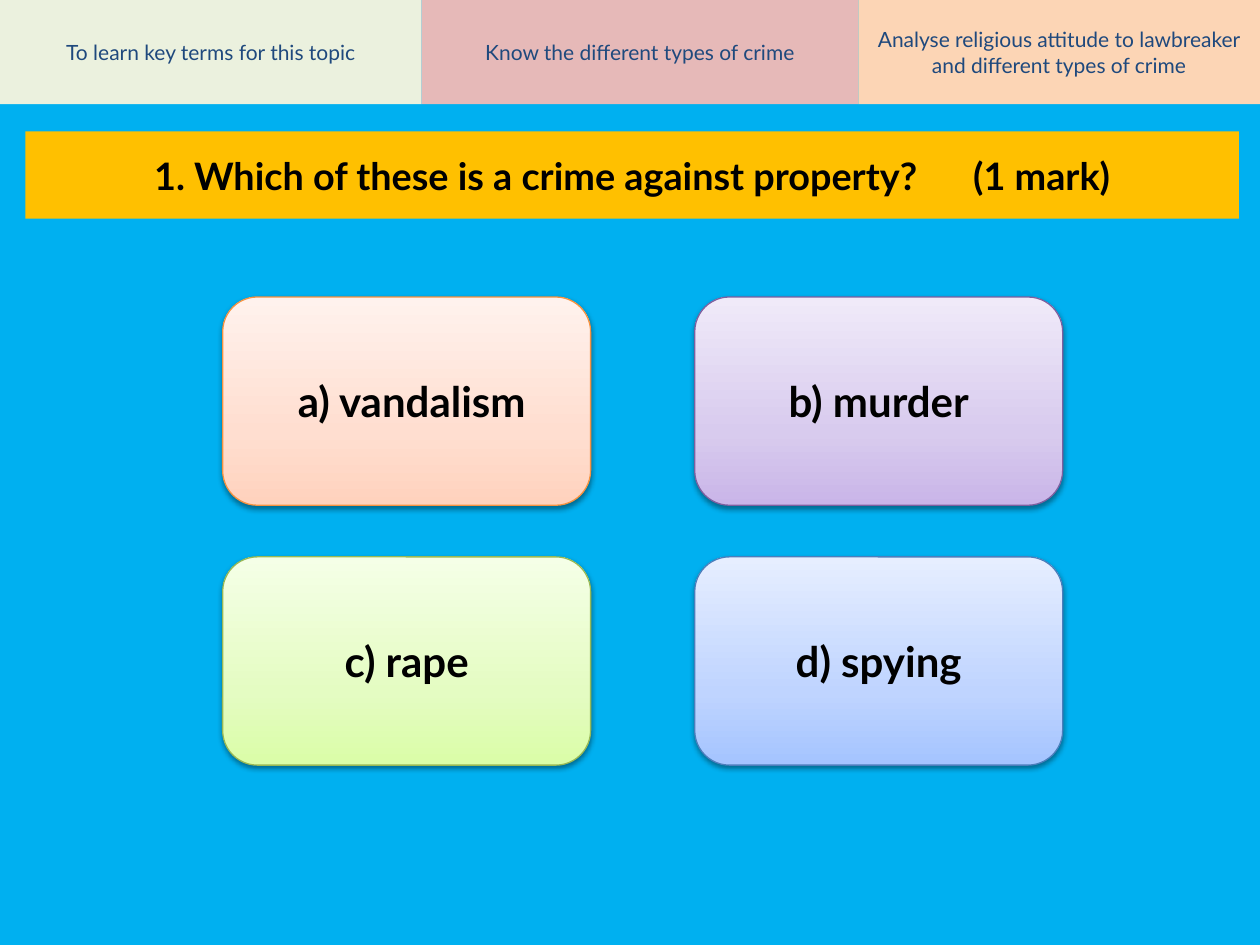
from dataclasses import dataclass

from lxml.etree import SubElement
from pptx import Presentation
from pptx.dml.color import RGBColor
from pptx.enum.shapes import MSO_SHAPE
from pptx.enum.text import MSO_ANCHOR, MSO_AUTO_SIZE, PP_ALIGN
from pptx.oxml import parse_xml
from pptx.oxml.ns import nsdecls, qn
from pptx.util import Pt


@dataclass(frozen=True)
class Theme:
    font: str = "Lato"
    background: str = "00B0F0"
    banner: str = "FFC000"
    ink: str = "000000"
    goal_ink: str = "1F497D"
    goal_size: float = 12
    title_size: float = 21.6
    answer_size: float = 24
    orange: tuple = ("F69240", "FFD2BD", "FFDED0", "FFF2ED")
    purple: tuple = ("7D60A0", "C9B5E8", "D8CBEE", "F0EAF9")
    green: tuple = ("98B955", "DAFDA7", "E4FCC2", "F5FFE7")
    blue: tuple = ("4B7EBC", "A4C4FF", "BFD4FF", "E6EEFF")


THEME = Theme()

GOALS = [
    ("To learn key terms for this topic", 241, "EBF1DE"),
    ("Know the different types of crime", 249.5, "E6B9B8"),
    ("Analyse religious attitude to lawbreaker and different types of crime", 229.5, "FCD5B5"),
]
QUESTION = "1. Which of these is a crime against property?\t(1 mark)"
ANSWERS = [
    (" a) vandalism", THEME.orange),
    ("b) murder", THEME.purple),
    ("c) rape", THEME.green),
    ("d) spying", THEME.blue),
]


def rgb(value):
    return RGBColor.from_string(value)


def write(sp, text, size, color, bold=False):
    tf = sp.text_frame
    tf.text = text
    tf.word_wrap = True
    tf.auto_size = MSO_AUTO_SIZE.NONE
    tf.vertical_anchor = MSO_ANCHOR.MIDDLE
    p = tf.paragraphs[0]
    p.alignment = PP_ALIGN.CENTER
    for r in p.runs:
        r.font.name = THEME.font
        r.font.size = Pt(size)
        r.font.bold = bold
        r.font.color.rgb = rgb(color)


def fill_solid(sp, color):
    sp.fill.solid()
    sp.fill.fore_color.rgb = rgb(color)


def add_box(s, kind, left, top, width, height):
    sp = s.shapes.add_shape(kind, Pt(left), Pt(top), Pt(width), Pt(height))
    sp.shadow.inherit = False
    return sp


def fill_gradient(sp, colors):
    stops = "".join(
        f'<a:gs pos="{pos}"><a:srgbClr val="{color}"/></a:gs>'
        for pos, color in zip((0, 35000, 100000), colors)
    )
    grad = parse_xml(
        f'<a:gradFill {nsdecls("a")} rotWithShape="1"><a:gsLst>{stops}</a:gsLst>'
        '<a:lin ang="16200000" scaled="1"/></a:gradFill>'
    )
    sp.element.spPr.find(qn("a:ln")).addprevious(grad)


def add_soft_shadow(sp):
    effects = sp.element.spPr.find(qn("a:effectLst"))
    shadow = SubElement(
        effects, qn("a:outerShdw"), blurRad=str(Pt(3.1)), dist=str(Pt(1.6)),
        dir="5400000", rotWithShape="0",
    )
    color = SubElement(shadow, qn("a:srgbClr"), val="000000")
    SubElement(color, qn("a:alpha"), val="38000")


def add_goals(s, left, top, height):
    for text, width, color in GOALS:
        sp = add_box(s, MSO_SHAPE.RECTANGLE, left, top, width, height)
        fill_solid(sp, color)
        sp.line.fill.background()
        write(sp, text, THEME.goal_size, THEME.goal_ink)
        left += width


def add_question(s, left, top, width, height):
    sp = s.shapes.title
    sp.left, sp.top, sp.width, sp.height = Pt(left), Pt(top), Pt(width), Pt(height)
    fill_solid(sp, THEME.banner)
    write(sp, QUESTION, THEME.title_size, THEME.ink, bold=True)


def add_answers(s, left, top, width, height):
    gap_x, gap_y = 59.5, 29.5
    card_w, card_h = (width - gap_x) / 2, (height - gap_y) / 2
    for i, (text, (edge, *stops)) in enumerate(ANSWERS):
        row, col = divmod(i, 2)
        sp = add_box(
            s, MSO_SHAPE.ROUNDED_RECTANGLE,
            left + col * (card_w + gap_x), top + row * (card_h + gap_y),
            card_w, card_h,
        )
        sp.line.color.rgb = rgb(edge)
        sp.line.width = Pt(0.75)
        fill_gradient(sp, stops)
        add_soft_shadow(sp)
        write(sp, text, THEME.answer_size, THEME.ink, bold=True)


def main():
    prs = Presentation()
    prs.slide_width, prs.slide_height = Pt(720), Pt(540)
    s = prs.slides.add_slide(prs.slide_layouts[5])
    fill_solid(s.background, THEME.background)
    add_question(s, 14.5, 75, 693.5, 50)
    add_goals(s, 0, 0, 59.5)
    add_answers(s, 127.25, 169.75, 480, 267.5)
    prs.save("out.pptx")


if __name__ == "__main__":
    main()
